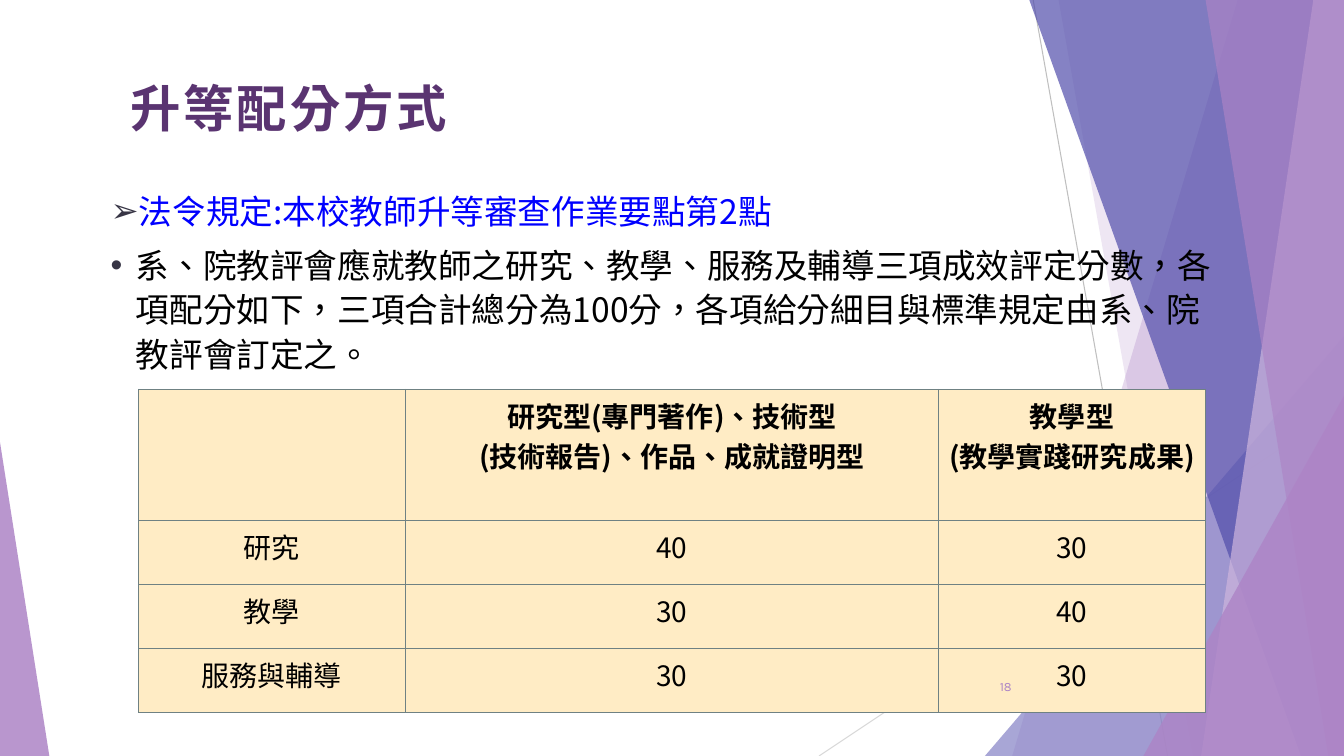
from dataclasses import dataclass

from lxml.etree import SubElement
from pptx import Presentation
from pptx.dml.color import RGBColor
from pptx.enum.lang import MSO_LANGUAGE_ID as Lang
from pptx.enum.shapes import MSO_CONNECTOR as Connector, MSO_SHAPE as Shape
from pptx.enum.text import MSO_ANCHOR as Anchor, PP_ALIGN as Align
from pptx.oxml.ns import qn
from pptx.util import Pt

PX = 9525
WIDTH, HEIGHT = 1280, 720


@dataclass(frozen=True)
class Theme:
    """Colours, fonts and type sizes of the slide."""
    cjk: str = "Noto Sans CJK SC"
    latin: str = "Karla"
    orchid: str = "AD84C6"
    pale_orchid: str = "CEB5DD"
    lavender: str = "8784C7"
    indigo: str = "524EAB"
    title: str = "5A3471"
    rule: str = "0000FF"
    ink: str = "000000"
    bullet: str = "373545"
    cell: str = "FFECC5"
    border: str = "6F8183"
    dark_line: str = "BFBFBF"
    light_line: str = "D9D9D9"
    title_size: int = 36
    body_size: int = 24
    table_size: int = 20
    number_size: int = 9


THEME = Theme()


def emu(*lengths):
    """Turn px lengths into EMU."""
    return [length * PX for length in lengths]


def style(paragraph, size, color, face=THEME.cjk, bold=False):
    """Set the font of a whole paragraph."""
    font = paragraph.font
    font.size, font.bold, font.name = Pt(size), bold, face
    font.color.rgb = RGBColor.from_string(color)
    font.language_id = Lang.TRADITIONAL_CHINESE
    SubElement(font._element, qn("a:ea"), typeface=face)


def paint(part, color, opacity):
    """Give a shape a translucent fill without outline or shadow."""
    part.shadow.inherit = False
    part.line.fill.background()
    part.fill.solid()
    part.fill.fore_color.rgb = RGBColor.from_string(color)
    tint = part.fill._xPr.find(qn("a:solidFill"))[0]
    SubElement(tint, qn("a:alpha"), val=str(opacity * 1000))


def add_hairline(slide, ends, color):
    """Draw a thin straight line between two points."""
    line = slide.shapes.add_connector(Connector.STRAIGHT, *emu(*ends))
    line.line.width = Pt(0.75)
    line.line.color.rgb = RGBColor.from_string(color)
    SubElement(line._element.spPr, qn("a:effectLst"))


def add_band(slide, top_x, bottom_x, color, opacity):
    """Draw a full-height band from a slanted left edge to the slide edge."""
    outline = slide.shapes.build_freeform(top_x, -1, scale=PX)
    outline.add_line_segments([(WIDTH, -1), (WIDTH, HEIGHT), (bottom_x, HEIGHT)])
    paint(outline.convert_to_shape(), color, opacity)


def add_wedge(slide, box, apex, color, opacity):
    """Draw a triangle whose apex sits at a fraction of its width."""
    wedge = slide.shapes.add_shape(Shape.ISOSCELES_TRIANGLE, *emu(*box))
    wedge.adjustments[0] = apex
    paint(wedge, color, opacity)


def add_backdrop(slide):
    """Layer the facets at both sides of the slide."""
    add_hairline(slide, (984, 0, 1112, HEIGHT), THEME.dark_line)
    add_hairline(slide, (WIDTH, 387, 780, HEIGHT), THEME.light_line)
    add_band(slide, 1179, 964, THEME.orchid, 30)
    add_band(slide, 1008, 1136, THEME.orchid, 20)
    add_wedge(slide, (938, 320, 342, 400), 1, THEME.lavender, 72)
    add_band(slide, 980, 1239, THEME.indigo, 70)
    add_band(slide, 1251, 1144, THEME.pale_orchid, 70)
    add_band(slide, 1148, 1265, THEME.orchid, 65)
    add_wedge(slide, (1089, 377, 191, 343), 1, THEME.orchid, 80)
    add_wedge(slide, (0, 421, 47, 299), 0, THEME.orchid, 85)


def add_frame(slide, box):
    """Add a wrapping text box and return its text frame."""
    frame = slide.shapes.add_textbox(*emu(*box)).text_frame
    frame.word_wrap = True
    return frame


def add_title(slide, box, text):
    """Write the slide title."""
    title = add_frame(slide, box).paragraphs[0]
    title.text, title.line_spacing = text, 0.9
    style(title, THEME.title_size, THEME.title, bold=True)
    title.runs[0].font._element.set("spc", "200")


def add_points(slide, box, points):
    """Write bulleted points given as bullet, text and colour."""
    frame = add_frame(slide, box)
    for index, (bullet, text, color) in enumerate(points):
        point = frame.add_paragraph() if index else frame.paragraphs[0]
        point.text, point.line_spacing, point.space_before = text, 1.1, Pt(7)
        props = point._p.get_or_add_pPr()
        props.set("marL", str(24 * PX))
        props.set("indent", str(-24 * PX))
        tint = SubElement(props, qn("a:buClr"))
        SubElement(tint, qn("a:srgbClr"), val=THEME.bullet)
        SubElement(props, qn("a:buFont"), typeface="Arial")
        SubElement(props, qn("a:buChar"), char=bullet)
        style(point, THEME.body_size, color)


def add_border(cell):
    """Outline all four sides of a table cell."""
    props = cell._tc.get_or_add_tcPr()
    for index, side in enumerate(("lnL", "lnR", "lnT", "lnB")):
        edge = SubElement(props, qn(f"a:{side}"), w=str(Pt(1)))
        ink = SubElement(edge, qn("a:solidFill"))
        SubElement(ink, qn("a:srgbClr"), val=THEME.border)
        props.insert(index, edge)


def add_scores(slide, left, top, widths, heights, rows):
    """Build the score table with a bold heading row."""
    box = emu(left, top, sum(widths), sum(heights))
    scores = slide.shapes.add_table(len(rows), len(widths), *box).table
    for column, width in zip(scores.columns, widths):
        column.width = width * PX
    for row, height in zip(scores.rows, heights):
        row.height = height * PX
    for row_index, row in enumerate(rows):
        for column_index, text in enumerate(row):
            cell = scores.cell(row_index, column_index)
            cell.text = text
            cell.fill.solid()
            cell.fill.fore_color.rgb = RGBColor.from_string(THEME.cell)
            add_border(cell)
            for paragraph in cell.text_frame.paragraphs:
                paragraph.alignment = Align.CENTER
                style(paragraph, THEME.table_size, THEME.ink, bold=row_index == 0)


def add_page_number(slide, box, number):
    """Write the page number."""
    frame = add_frame(slide, box)
    frame.vertical_anchor = Anchor.MIDDLE
    page = frame.paragraphs[0]
    page.text, page.alignment = number, Align.RIGHT
    style(page, THEME.number_size, THEME.orchid, THEME.latin)


def main():
    """Build the slide and save it."""
    deck = Presentation()
    deck.slide_width, deck.slide_height = emu(WIDTH, HEIGHT)
    slide = deck.slides.add_slide(deck.slide_layouts[6])
    add_backdrop(slide)
    add_title(slide, (115, 75, 1068, 78), "升等配分方式")
    add_points(slide, (96, 173, 1088, 198), [
        ("➢", "法令規定:本校教師升等審查作業要點第2點", THEME.rule),
        ("•", "系、院教評會應就教師之研究、教學、服務及輔導三項成效評定分數，"
         "各項配分如下，三項合計總分為100分，"
         "各項給分細目與標準規定由系、院教評會訂定之。", THEME.ink),
    ])
    add_scores(slide, 132, 371, (254, 508, 254), (125, 61, 61, 61), [
        ("", "研究型(專門著作)、技術型\n(技術報告)、作品、成就證明型", "教學型\n(教學實踐研究成果)"),
        ("研究", "40", "30"),
        ("教學", "30", "40"),
        ("服務與輔導", "30", "30"),
    ])
    add_page_number(slide, (901, 635, 72, 38), "18")
    deck.save("out.pptx")


if __name__ == "__main__":
    main()
